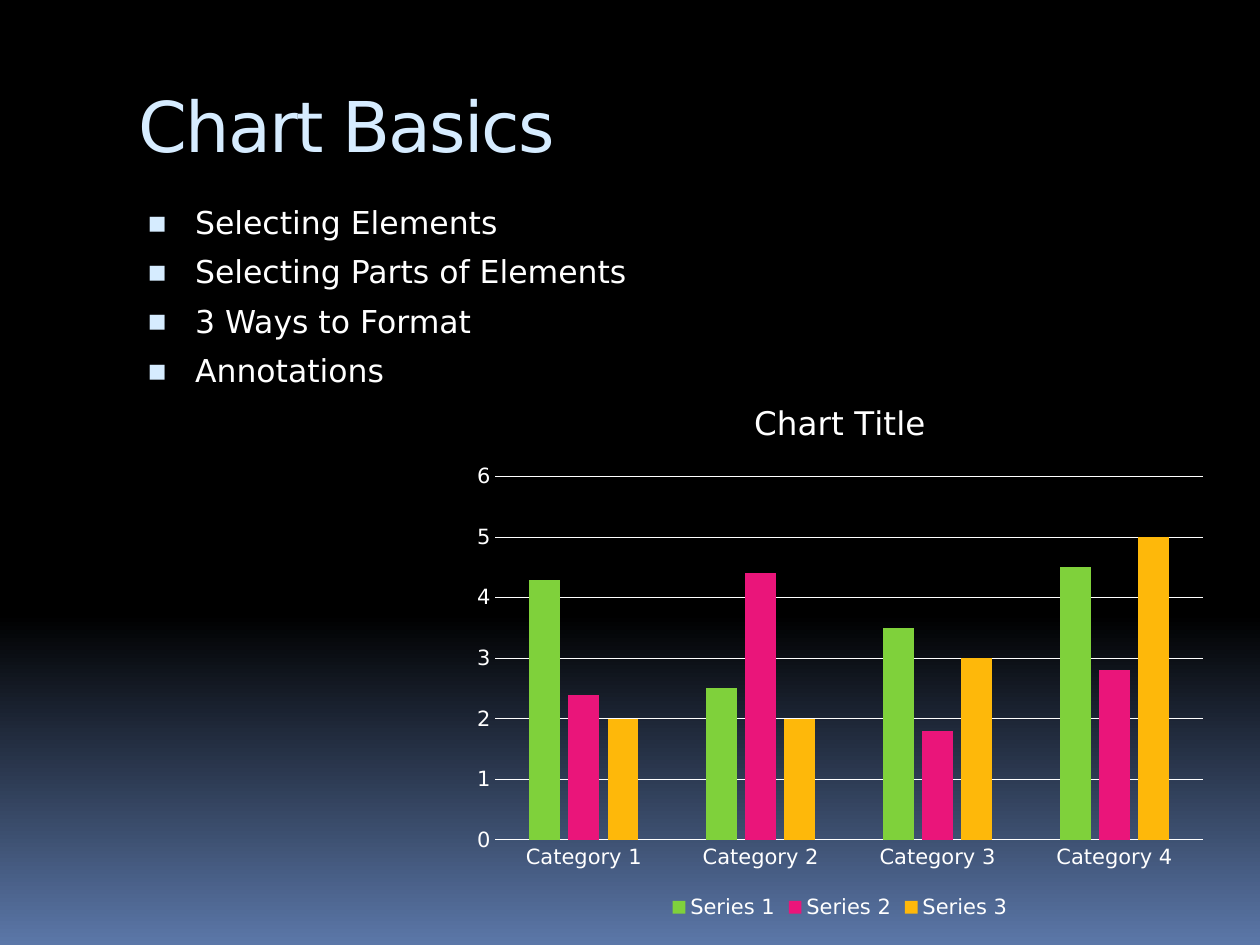
import copy

import pptx
import pptx.chart.data
import pptx.dml.color
import pptx.enum.chart
import pptx.enum.text
import pptx.oxml
import pptx.oxml.ns
import pptx.util

Pt = pptx.util.Pt
WHITE, ICE = "FFFFFF", "D6ECFF"


def paint(color, value):
    color.rgb = pptx.dml.color.RGBColor.from_string(value)


class Deck:
    font = "DejaVu Sans"

    def __init__(self, width, height):
        self.presentation = pptx.Presentation()
        self.presentation.slide_width = Pt(width)
        self.presentation.slide_height = Pt(height)
        self.slide = self.presentation.slides.add_slide(self.presentation.slide_layouts[6])

    def style(self, font, size, color=WHITE):
        font.name, font.size, font.bold = self.font, Pt(size), False
        paint(font.color, color)

    def background(self, stops):
        fill = self.slide.background.fill
        fill.gradient()
        fill.gradient_angle = 270
        stop_list = fill._fill._gradFill.gsLst
        while len(stop_list) < len(stops):
            stop_list.append(copy.deepcopy(stop_list[-1]))
        for stop, (position, color) in zip(fill.gradient_stops, stops):
            stop.position = position
            paint(stop.color, color)

    def text(self, lines, box, size, color, top_margin, space_before=0):
        frame = self.slide.shapes.add_textbox(*map(Pt, box)).text_frame
        frame.word_wrap = True
        frame.margin_top = Pt(top_margin)
        frame.vertical_anchor = pptx.enum.text.MSO_ANCHOR.TOP
        frame.text = "\n".join(lines)
        for paragraph in frame.paragraphs:
            self.style(paragraph.font, size, color)
            paragraph.space_before = Pt(space_before)
        return frame.paragraphs

    def title(self, wording, box):
        heading = self.text([wording], box, 40, ICE, 7)[0]
        heading.runs[0].font._element.set("spc", "-100")

    def bullets(self, items, box):
        for item in self.text(items, box, 18, WHITE, 5.2, 6.6):
            properties = item._p.get_or_add_pPr()
            properties.set("marL", str(Pt(32.4)))
            properties.set("indent", str(Pt(-27.4)))
            for mark in (f'<a:buClr %s><a:srgbClr val="{ICE}"/></a:buClr>',
                         '<a:buSzPct %s val="95000"/>',
                         f'<a:buFont %s typeface="{self.font}"/>',
                         '<a:buChar %s char="▪"/>'):
                element = pptx.oxml.parse_xml(mark % pptx.oxml.ns.nsdecls("a"))
                properties.insert_element_before(element, "a:tabLst", "a:defRPr", "a:extLst")

    def line(self, line):
        paint(line.color, WHITE)
        line.width = Pt(0.75)

    def column_chart(self, title, categories, series, box):
        data = pptx.chart.data.CategoryChartData()
        data.categories = categories
        for name, _, values in series:
            data.add_series(name, values)
        kind = pptx.enum.chart.XL_CHART_TYPE.COLUMN_CLUSTERED
        chart = self.slide.shapes.add_chart(kind, *map(Pt, box), data).chart
        self.style(chart.font, 10)

        # Title and legend
        chart.has_title = True
        chart.chart_title.text_frame.text = title
        self.style(chart.chart_title.text_frame.paragraphs[0].font, 18.6)
        chart.chart_title.include_in_layout = False
        chart.has_legend = True
        chart.legend.position = pptx.enum.chart.XL_LEGEND_POSITION.BOTTOM
        chart.legend.include_in_layout = False
        self.style(chart.legend.font, 12)

        # Axes
        for axis in (chart.category_axis, chart.value_axis):
            axis.major_tick_mark = axis.minor_tick_mark = pptx.enum.chart.XL_TICK_MARK.NONE
            self.style(axis.tick_labels.font, 12)
        self.line(chart.category_axis.format.line)
        values_axis = chart.value_axis
        values_axis.format.line.fill.background()
        values_axis.minimum_scale, values_axis.maximum_scale, values_axis.major_unit = 0, 6, 1
        values_axis.has_major_gridlines = True
        self.line(values_axis.major_gridlines.format.line)

        # Columns
        plot = chart.plots[0]
        plot.vary_by_categories = False
        plot.gap_width, plot.overlap = 219, -27
        for columns, (_, color, _) in zip(plot.series, series):
            columns.invert_if_negative = False
            columns.format.fill.solid()
            paint(columns.format.fill.fore_color, color)


def main():
    deck = Deck(720, 540)
    deck.background([(0, "000000"), (0.65, "000000"), (1, "5B77A8")])

    # Heading and topics
    deck.title("Chart Basics", (72, 40.3, 612, 72))
    deck.bullets(["Selecting Elements", "Selecting Parts of Elements",
                  "3 Ways to Format", "Annotations"], (72, 110.9, 612, 360))

    # Sample chart
    deck.column_chart(
        "Chart Title",
        [f"Category {number}" for number in range(1, 5)],
        [("Series 1", "7FD13B", (4.3, 2.5, 3.5, 4.5)),
         ("Series 2", "EA157A", (2.4, 4.4, 1.8, 2.8)),
         ("Series 3", "FEB80A", (2, 2, 3, 5))],
        (264, 216, 432, 312.5))

    deck.presentation.save("out.pptx")


if __name__ == "__main__":
    main()
